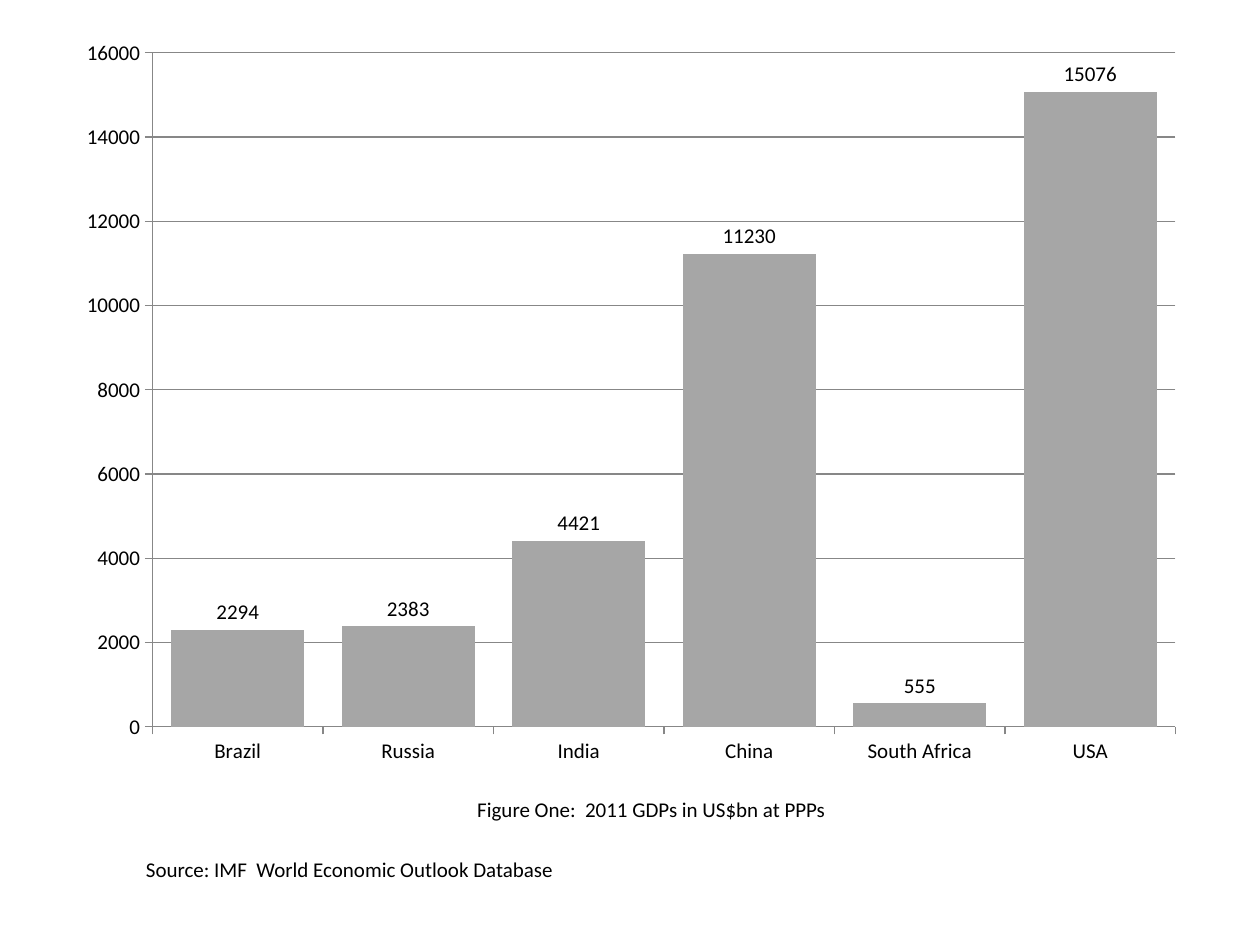
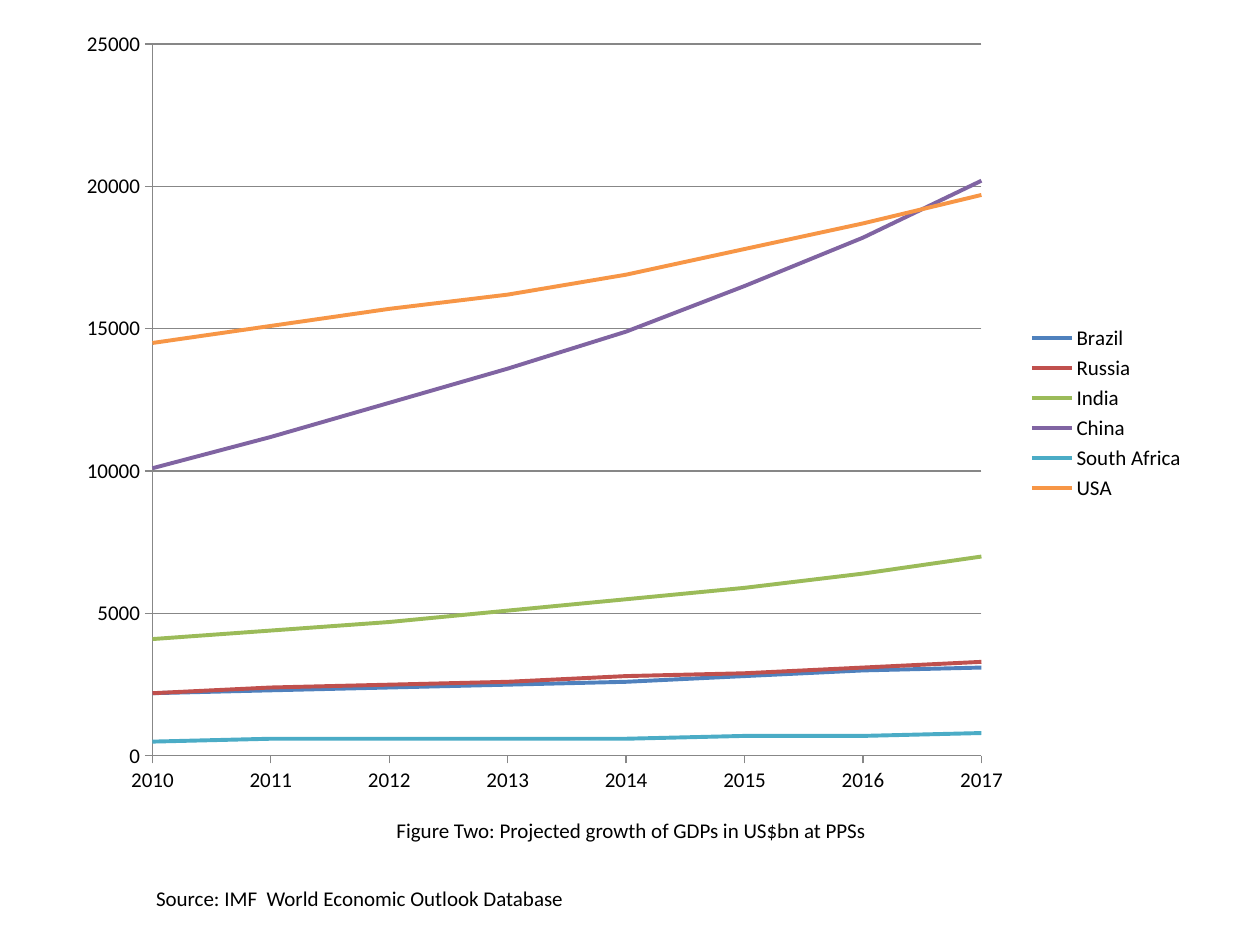
from dataclasses import dataclass

from lxml import etree
from pptx import Presentation
from pptx.chart.data import CategoryChartData
from pptx.dml.color import RGBColor
from pptx.enum.chart import XL_CHART_TYPE, XL_LABEL_POSITION, XL_LEGEND_POSITION, XL_TICK_MARK
from pptx.enum.text import MSO_ANCHOR, PP_ALIGN
from pptx.oxml.ns import qn
from pptx.util import Inches, Pt

COLUMN_CHART = XL_CHART_TYPE.COLUMN_CLUSTERED
LINE_CHART = XL_CHART_TYPE.LINE
OUTSIDE_END = XL_LABEL_POSITION.OUTSIDE_END
LEGEND_RIGHT = XL_LEGEND_POSITION.RIGHT
TICK_OUTSIDE = XL_TICK_MARK.OUTSIDE
TOP, MIDDLE = MSO_ANCHOR.TOP, MSO_ANCHOR.MIDDLE
LEFT, CENTER = PP_ALIGN.LEFT, PP_ALIGN.CENTER

# Slide grid: 100 columns by 75 rows
SLIDE_WIDTH, SLIDE_HEIGHT = Inches(10), Inches(7.5)
COLUMN, ROW = SLIDE_WIDTH // 100, SLIDE_HEIGHT // 75

# Shared style
FONT, TEXT_SIZE = "Calibri", 12
COLORS = {
    "text": "000000",
    "axis": "878787",
    "bar": "A6A6A6",
    "Brazil": "4F81BD",
    "Russia": "C0504D",
    "India": "9BBB59",
    "China": "8064A2",
    "South Africa": "4BACC6",
    "USA": "F79646",
}
SOURCE = "Source: IMF  World Economic Outlook Database"


@dataclass(frozen=True)
class Box:
    """An area in grid columns and rows."""
    left: float
    top: float
    width: float
    height: float

    def lengths(self) -> tuple:
        return (round(self.left * COLUMN), round(self.top * ROW),
                round(self.width * COLUMN), round(self.height * ROW))

    def shares_of(self, outer: "Box") -> dict:
        return {"x": (self.left - outer.left) / outer.width,
                "y": (self.top - outer.top) / outer.height,
                "w": self.width / outer.width,
                "h": self.height / outer.height}


@dataclass(frozen=True)
class Figure:
    caption: str
    caption_box: Box
    chart_type: int
    chart_box: Box
    plot_box: Box
    source_box: Box
    axis_maximum: int
    axis_step: int
    categories: tuple
    series: dict


FIGURES = (
    Figure(
        caption="Figure One:  2011 GDPs in US$bn at PPPs",
        caption_box=Box(6.7, 61.9, 90, 4.7),
        chart_type=COLUMN_CHART,
        chart_box=Box(5.1, 2.1, 90, 59.8),
        plot_box=Box(12.1, 4.2, 81.2, 53.5),
        source_box=Box(10.6, 67.5, 34.7, 3),
        axis_maximum=16000,
        axis_step=2000,
        categories=("Brazil", "Russia", "India", "China", "South Africa", "USA"),
        series={"Series 1": (2294, 2383, 4421, 11230, 555, 15076)},
    ),
    Figure(
        caption="Figure Two: Projected growth of GDPs in US$bn at PPSs",
        caption_box=Box(5.1, 63.5, 90, 4.7),
        chart_type=LINE_CHART,
        chart_box=Box(5.1, 1.3, 90, 63),
        plot_box=Box(12.1, 3.5, 65.8, 56.5),
        source_box=Box(11.4, 69.8, 34.7, 3),
        axis_maximum=25000,
        axis_step=5000,
        categories=tuple(str(year) for year in range(2010, 2018)),
        series={
            "Brazil": (2200, 2300, 2400, 2500, 2600, 2800, 3000, 3100),
            "Russia": (2200, 2400, 2500, 2600, 2800, 2900, 3100, 3300),
            "India": (4100, 4400, 4700, 5100, 5500, 5900, 6400, 7000),
            "China": (10100, 11200, 12400, 13600, 14900, 16500, 18200, 20200),
            "South Africa": (500, 600, 600, 600, 600, 700, 700, 800),
            "USA": (14500, 15100, 15700, 16200, 16900, 17800, 18700, 19700),
        },
    ),
)


def color(name: str) -> RGBColor:
    return RGBColor.from_string(COLORS[name])


def style_font(font) -> None:
    font.name, font.size = FONT, Pt(TEXT_SIZE)
    font.color.rgb = color("text")


def add_text(slide, text: str, box: Box, *, align=LEFT, anchor=TOP, wrap=True) -> None:
    frame = slide.shapes.add_textbox(*box.lengths()).text_frame
    frame.word_wrap, frame.vertical_anchor = wrap, anchor
    paragraph = frame.paragraphs[0]
    paragraph.alignment = align
    run = paragraph.add_run()
    run.text = text
    style_font(run.font)


def style_line(line, name: str, width: float) -> None:
    line.color.rgb = color(name)
    line.width = Pt(width)


def place_plot(chart, shares: dict) -> None:
    """Fix the inner plot area at the given shares of the chart."""
    plot_area = chart.element.find(".//" + qn("c:plotArea"))
    for automatic in plot_area.findall(qn("c:layout")):
        plot_area.remove(automatic)
    layout = etree.Element(qn("c:layout"))
    manual = etree.SubElement(layout, qn("c:manualLayout"))
    settings = {"layoutTarget": "inner", "xMode": "edge", "yMode": "edge", **shares}
    for tag, value in settings.items():
        etree.SubElement(manual, qn("c:" + tag)).set("val", str(value))
    plot_area.insert(0, layout)


def start_on_value_axis(chart) -> None:
    """Let the first category sit on the value axis."""
    axis = chart.element.find(".//" + qn("c:valAx"))
    for present in axis.findall(qn("c:crossBetween")):
        axis.remove(present)
    crossing = etree.Element(qn("c:crossBetween"))
    crossing.set("val", "midCat")
    axis.find(qn("c:majorUnit")).addprevious(crossing)


def style_axes(chart, figure: Figure) -> None:
    for axis in (chart.category_axis, chart.value_axis):
        axis.major_tick_mark = TICK_OUTSIDE
        style_font(axis.tick_labels.font)
        style_line(axis.format.line, "axis", 0.75)
    value_axis = chart.value_axis
    value_axis.minimum_scale, value_axis.maximum_scale = 0, figure.axis_maximum
    value_axis.major_unit = figure.axis_step
    value_axis.has_major_gridlines = True
    style_line(value_axis.major_gridlines.format.line, "axis", 0.75)


def style_columns(chart) -> None:
    plot = chart.plots[0]
    plot.gap_width, plot.overlap = 28, -43
    plot.vary_by_categories = False
    fill = plot.series[0].format.fill
    fill.solid()
    fill.fore_color.rgb = color("bar")
    plot.has_data_labels = True
    labels = plot.data_labels
    labels.show_value, labels.position = True, OUTSIDE_END
    style_font(labels.font)


def style_lines(chart) -> None:
    plot = chart.plots[0]
    plot.vary_by_categories = False
    for series in plot.series:
        series.smooth = False
        style_line(series.format.line, series.name, 2.25)
    start_on_value_axis(chart)
    chart.has_legend = True
    chart.legend.position = LEGEND_RIGHT
    chart.legend.include_in_layout = False
    style_font(chart.legend.font)


def add_figure_chart(slide, figure: Figure) -> None:
    data = CategoryChartData()
    data.categories = figure.categories
    for name, values in figure.series.items():
        data.add_series(name, values)
    chart = slide.shapes.add_chart(
        figure.chart_type, *figure.chart_box.lengths(), data).chart
    chart.has_title = chart.has_legend = False
    style_font(chart.font)
    style_axes(chart, figure)
    if figure.chart_type == COLUMN_CHART:
        style_columns(chart)
    else:
        style_lines(chart)
    place_plot(chart, figure.plot_box.shares_of(figure.chart_box))


def main() -> None:
    presentation = Presentation()
    presentation.slide_width, presentation.slide_height = SLIDE_WIDTH, SLIDE_HEIGHT
    for figure in FIGURES:
        slide = presentation.slides.add_slide(presentation.slide_layouts[6])
        add_text(slide, figure.caption, figure.caption_box, align=CENTER, anchor=MIDDLE)
        add_figure_chart(slide, figure)
        add_text(slide, SOURCE, figure.source_box, wrap=False)
    presentation.save("out.pptx")


if __name__ == "__main__":
    main()
